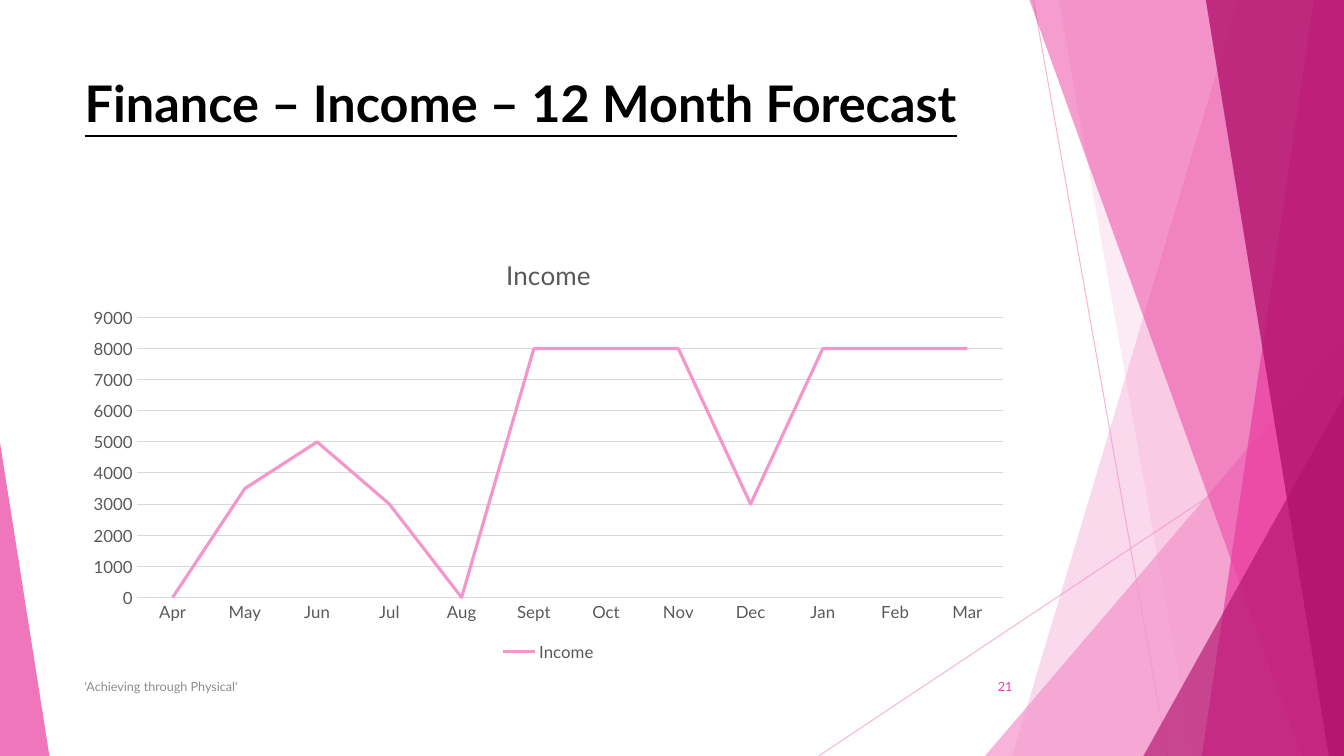
from dataclasses import dataclass

from lxml import etree
from pptx import Presentation
from pptx.chart.data import CategoryChartData
from pptx.dml.color import RGBColor
from pptx.enum.chart import XL_CHART_TYPE, XL_LEGEND_POSITION, XL_TICK_MARK
from pptx.enum.shapes import MSO_CONNECTOR, MSO_SHAPE
from pptx.enum.text import MSO_ANCHOR, MSO_AUTO_SIZE, PP_ALIGN
from pptx.oxml.ns import qn
from pptx.util import Inches, Pt

LINE = XL_CHART_TYPE.LINE
BOTTOM = XL_LEGEND_POSITION.BOTTOM
NO_TICK = XL_TICK_MARK.NONE
STRAIGHT = MSO_CONNECTOR.STRAIGHT
TRIANGLE = MSO_SHAPE.ISOSCELES_TRIANGLE
TOP, MIDDLE = MSO_ANCHOR.TOP, MSO_ANCHOR.MIDDLE
LEFT, RIGHT = PP_ALIGN.LEFT, PP_ALIGN.RIGHT


@dataclass(frozen=True)
class Theme:
    font: str = "Lato"
    black: str = "000000"
    text: str = "595959"
    muted: str = "8C8C8C"
    grid: str = "D9D9D9"
    light: str = "F496CB"
    pink: str = "EB3D9F"
    dark: str = "B2136D"
    head: float = 36
    chart: float = 18.6
    label: float = 12
    foot: float = 9


T = Theme()
WIDE, HIGH = 13.33, 7.5

# Content
TITLE = "Finance – Income – 12 Month Forecast"
SERIES = "Income"
INCOME = {
    "Apr": 0, "May": 3500, "Jun": 5000, "Jul": 3000, "Aug": 0, "Sept": 8000,
    "Oct": 8000, "Nov": 8000, "Dec": 3000, "Jan": 8000, "Feb": 8000, "Mar": 8000,
}
# text, left, width, alignment, colour
FOOTERS = [
    ("'Achieving through Physical'", 0.74, 6.89, LEFT, T.muted),
    ("21", 9.39, 0.75, RIGHT, T.pink),
]

# Decoration, from back to front
RAYS = [((10.25, 0), (11.58, HIGH)), ((WIDE, 4.03), (8.12, HIGH))]
# bands reach the right edge: top x, bottom x, colour, opacity
# peaks stand on the bottom edge: left, top, width, apex, colour, opacity
SHARDS = [
    ("band", 12.28, 10.04, T.light, 36),
    ("band", 10.5, 11.83, T.light, 20),
    ("peak", 9.77, 3.33, 3.56, 1, T.light, 72),
    ("band", 10.21, 12.91, T.pink, 50),
    ("band", 13.03, 11.92, T.pink, 70),
    ("band", 11.96, 13.18, T.dark, 80),
    ("peak", 11.34, 3.93, 1.99, 1, T.dark, 66),
    ("peak", 0, 4.39, 0.49, 0, T.pink, 70),
]


def rgb(tone):
    return RGBColor.from_string(tone)


def style(font, size, tone, bold=False):
    font.name, font.size, font.bold = T.font, Pt(size), bold
    font.color.rgb = rgb(tone)


def fade(part, amount):
    for color in part.iter(qn("a:srgbClr")):
        etree.SubElement(color, qn("a:alpha")).set("val", str(amount * 1000))


def box(*sizes):
    return [Inches(size) for size in sizes]


def ray(shapes, start, end):
    line = shapes.add_connector(STRAIGHT, *box(*start, *end))
    line.line.color.rgb = rgb(T.light)
    line.line.width = Pt(0.75)
    props = line._element.spPr
    fade(props, 70)
    etree.SubElement(props, qn("a:effectLst"))


def band(shapes, top, base):
    build = shapes.build_freeform(*box(top, 0))
    edge = [(WIDE, 0), (WIDE, HIGH), (base, HIGH)]
    build.add_line_segments([box(*point) for point in edge], close=True)
    return build.convert_to_shape()


def peak(shapes, left, top, width, apex):
    shape = shapes.add_shape(TRIANGLE, *box(left, top, width, HIGH - top))
    shape.adjustments[0] = apex
    return shape


def shard(shapes, kind, *rest):
    *place, tone, amount = rest
    shape = {"band": band, "peak": peak}[kind](shapes, *place)
    shape.shadow.inherit = False
    shape.fill.solid()
    shape.fill.fore_color.rgb = rgb(tone)
    shape.line.fill.background()
    fade(shape._element.spPr, amount)


def rule(line, tone, width):
    line.color.rgb = rgb(tone)
    line.width = Pt(width)


def plot(shapes):
    data = CategoryChartData()
    data.categories = list(INCOME)
    data.add_series(SERIES, list(INCOME.values()))
    chart = shapes.add_chart(LINE, *box(0.74, 2.36, 9.4, 4.24), data).chart
    style(chart.font, T.label, T.text)

    # Title and legend
    chart.has_title = True
    frame = chart.chart_title.text_frame
    frame.text = SERIES
    style(frame.paragraphs[0].runs[0].font, T.chart, T.text)
    chart.chart_title.include_in_layout = False
    chart.has_legend = True
    chart.legend.position = BOTTOM
    chart.legend.include_in_layout = False
    style(chart.legend.font, T.label, T.text)

    # Axes
    months, values = chart.category_axis, chart.value_axis
    for axis in (months, values):
        axis.major_tick_mark = axis.minor_tick_mark = NO_TICK
        style(axis.tick_labels.font, T.label, T.text)
    rule(months.format.line, T.grid, 0.75)
    values.minimum_scale, values.maximum_scale, values.major_unit = 0, 9000, 1000
    values.format.line.fill.background()
    rule(values.major_gridlines.format.line, T.grid, 0.75)

    # Line
    chart.plots[0].vary_by_categories = False
    income = chart.plots[0].series[0]
    income.smooth = False
    rule(income.format.line, T.light, 2.25)


def footer(shapes, text, left, width, align, tone):
    frame = shapes.add_textbox(*box(left, 6.61, width, 0.4)).text_frame
    frame.word_wrap = True
    frame.vertical_anchor = MIDDLE
    frame.text = text
    line = frame.paragraphs[0]
    line.alignment = align
    style(line.runs[0].font, T.foot, tone)


def heading(title):
    title.left, title.top, title.width, title.height = box(0.74, 0.67, 9.4, 1.44)
    frame = title.text_frame
    frame.text = TITLE
    frame.auto_size = MSO_AUTO_SIZE.NONE
    frame.vertical_anchor = TOP
    line = frame.paragraphs[0]
    line.alignment = LEFT
    font = line.runs[0].font
    style(font, T.head, T.black, bold=True)
    font.underline = True


def main():
    deck = Presentation()
    deck.slide_width, deck.slide_height = box(WIDE, HIGH)
    slide = deck.slides.add_slide(deck.slide_layouts[5])
    shapes = slide.shapes
    for ends in RAYS:
        ray(shapes, *ends)
    for item in SHARDS:
        shard(shapes, *item)
    plot(shapes)
    for item in FOOTERS:
        footer(shapes, *item)
    heading(shapes.title)
    deck.save("out.pptx")


if __name__ == "__main__":
    main()
